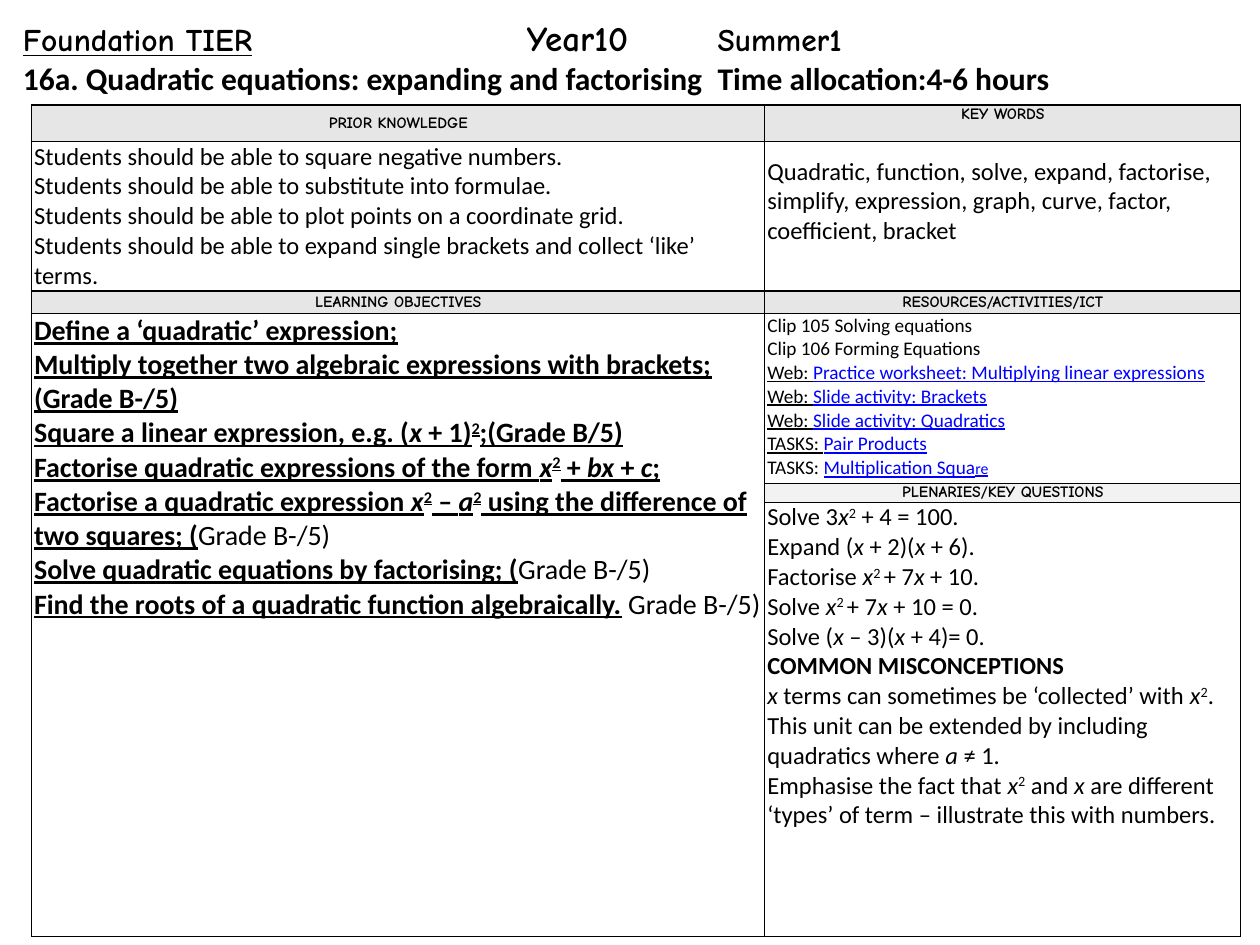
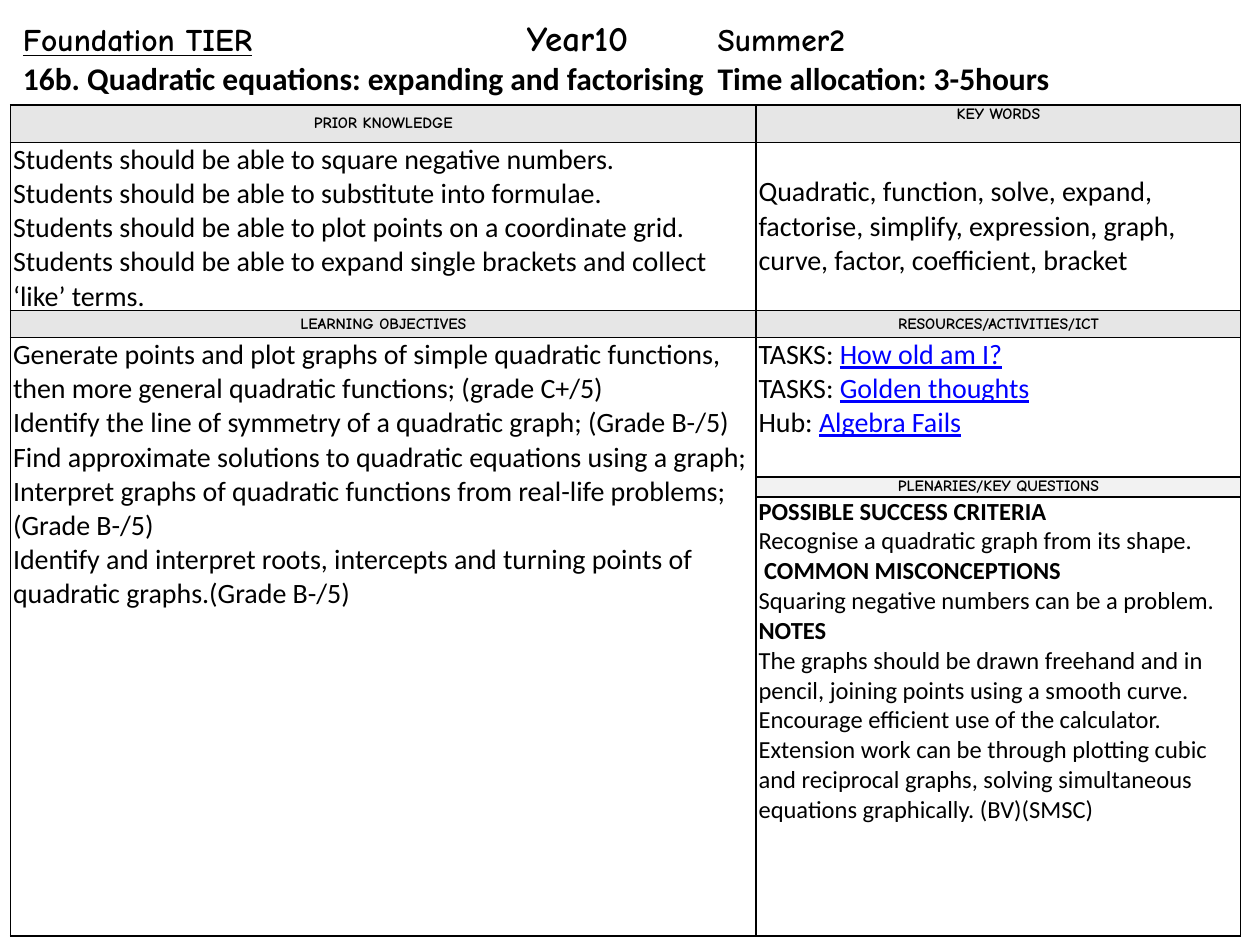
from lxml import etree
from pptx import Presentation
from pptx.dml.color import RGBColor
from pptx.enum import text
from pptx.oxml.ns import qn
from pptx.util import Pt

BLACK, LINK, HEADER, SUBHEADER = "000000", "0000FF", "E6E6E6", "F2F2F2"
BODY_FONT, LABEL_FONT = "Calibri", "Comic Neue"
TITLE_TABS = (288, 397)
MARKS = {"*": "italic", "^": "raised", "#": "bold", "_": "underline",
         "@": "link", "~": "resized"}
MIDDLE, TOP = text.MSO_ANCHOR.MIDDLE, text.MSO_ANCHOR.TOP


def color(hex_string):
    return RGBColor.from_string(hex_string)


def split_marks(line, base):
    state, chunk = dict(base), ""
    for ch in line:
        if ch in MARKS:
            if chunk:
                yield chunk, dict(state)
            chunk = ""
            state[MARKS[ch]] = not state.get(MARKS[ch], False)
        else:
            chunk += ch
    if chunk:
        yield chunk, state


def write(p, line, size=14, alt_size=9, font=BODY_FONT, bold=False,
          underline=False, align=text.PP_ALIGN.LEFT):
    p.alignment = align
    for chunk, style in split_marks(line, {"bold": bold, "underline": underline}):
        r = p.add_run()
        r.text = chunk
        f = r.font
        link = style.get("link", False)
        f.name = font
        f.size = Pt(alt_size if style.get("resized") else size)
        f.bold = style["bold"]
        f.italic = style.get("italic", False)
        f.underline = style["underline"] or link
        f.color.rgb = color(LINK if link else BLACK)
        if style.get("raised"):
            r._r.get_or_add_rPr().set("baseline", "30000")


def write_lines(tf, lines, **fmt):
    for i, line in enumerate(lines):
        write(tf.paragraphs[0] if i == 0 else tf.add_paragraph(), line, **fmt)


def add_tabs(p):
    tabs = etree.SubElement(p._p.get_or_add_pPr(), qn("a:tabLst"))
    for pos in TITLE_TABS:
        etree.SubElement(tabs, qn("a:tab"), pos=str(Pt(pos)), algn="l")


def add_title(s, term, unit):
    tf = s.shapes.add_textbox(Pt(6), Pt(6), Pt(702), Pt(53)).text_frame
    tf.word_wrap = True
    p, unit_p = tf.paragraphs[0], tf.add_paragraph()
    add_tabs(p)
    add_tabs(unit_p)
    write(p, f"_Foundation TIER_\t~Year10~\t{term}", size=18, alt_size=20,
          font=LABEL_FONT, bold=True)
    write(unit_p, unit, size=18, bold=True)


def add_borders(cell):
    tcPr = cell._tc.get_or_add_tcPr()
    for side in ("lnL", "lnR", "lnT", "lnB"):
        ln = etree.SubElement(tcPr, qn(f"a:{side}"), w=str(Pt(1)))
        fill = etree.SubElement(ln, qn("a:solidFill"))
        etree.SubElement(fill, qn("a:srgbClr"), val=BLACK)


def add_grid(s, left, widths, heights):
    frame = s.shapes.add_table(len(heights), len(widths), Pt(left), Pt(60),
                               Pt(sum(widths)), Pt(sum(heights)))
    table = frame.table
    table.first_row = table.horz_banding = False
    for col, width in zip(table.columns, widths):
        col.width = Pt(width)
    for row, height in zip(table.rows, heights):
        row.height = Pt(height)
    for cell in table.iter_cells():
        cell.margin_left = cell.margin_right = Pt(1.5)
        cell.margin_top = cell.margin_bottom = 0
        add_borders(cell)
        cell.fill.background()
    table.cell(3, 0).merge(table.cell(5, 0))
    return table


def add_label(cell, label, fill=HEADER, anchor=MIDDLE):
    cell.fill.solid()
    cell.fill.fore_color.rgb = color(fill)
    cell.vertical_anchor = anchor
    write_lines(cell.text_frame, [label], size=9, font=LABEL_FONT, bold=True,
                align=text.PP_ALIGN.CENTER)


def add_plan(s, left, widths, heights, objectives, resources, questions,
             knowledge_size, resource_size, objectives_bold=False, keyword_gap=0):
    table = add_grid(s, left, widths, heights)
    add_label(table.cell(0, 0), "PRIOR KNOWLEDGE")
    add_label(table.cell(0, 1), "KEY WORDS", anchor=TOP)
    add_label(table.cell(2, 0), "LEARNING OBJECTIVES")
    add_label(table.cell(2, 1), "RESOURCES/ACTIVITIES/ICT")
    add_label(table.cell(4, 1), "PLENARIES/KEY QUESTIONS", SUBHEADER, TOP)
    keywords = table.cell(1, 1)
    keywords.vertical_anchor = MIDDLE
    keywords.margin_bottom = Pt(keyword_gap)
    write_lines(keywords.text_frame, [KEY_WORDS], size=knowledge_size)
    write_lines(table.cell(1, 0).text_frame, PRIOR_KNOWLEDGE, size=knowledge_size)
    write_lines(table.cell(3, 0).text_frame, objectives, size=16,
                bold=objectives_bold, underline=objectives_bold)
    write_lines(table.cell(3, 1).text_frame, resources, size=resource_size)
    write_lines(table.cell(5, 1).text_frame, questions)


PRIOR_KNOWLEDGE = [
    "Students should be able to square negative numbers.",
    "Students should be able to substitute into formulae.",
    "Students should be able to plot points on a coordinate grid.",
    "Students should be able to expand single brackets and collect ‘like’ terms.",
]
KEY_WORDS = ("Quadratic, function, solve, expand, factorise, simplify, expression, "
             "graph, curve, factor, coefficient, bracket")

FACTORISING = dict(
    left=18, widths=(419, 272), heights=(21, 85, 13, 97, 11, 248),
    knowledge_size=14, resource_size=11, objectives_bold=True, keyword_gap=17,
    objectives=[
        "Define a ‘quadratic’ expression;",
        "Multiply together two algebraic expressions with brackets;(Grade B-/5)",
        "Square a linear expression, e.g. (*x* + 1)^2^;(Grade B/5)",
        "Factorise quadratic expressions of the form *x*^2^ + *bx* + *c*;",
        "Factorise a quadratic expression *x*^2^ – *a*^2^ using the difference of "
        "two squares; (#_Grade B-/5)",
        "Solve quadratic equations by factorising; (#_Grade B-/5)",
        "Find the roots of a quadratic function algebraically.#_ Grade B-/5)",
    ],
    resources=[
        "Clip 105 Solving equations",
        "Clip 106 Forming Equations",
        "_Web: @Practice worksheet: Multiplying linear expressions@",
        "_Web: @Slide activity: Brackets@",
        "_Web: @Slide activity: Quadratics@",
        "_TASKS: @Pair Products@",
        "TASKS: @Multiplication Squa~re~@",
    ],
    questions=[
        "Solve 3*x*^2^ + 4 = 100.",
        "Expand (*x* + 2)(*x* + 6).",
        "Factorise *x*^2 ^+ 7*x* + 10.",
        "Solve *x*^2 ^+ 7*x* + 10 = 0.",
        "Solve (*x* – 3)(*x* + 4)= 0.",
        "#COMMON MISCONCEPTIONS",
        "*x* terms can sometimes be ‘collected’ with *x*^2^.",
        "This unit can be extended by including quadratics where *a* ≠ 1.",
        "Emphasise the fact that *x*^2^ and *x* are different ‘types’ of term – "
        "illustrate this with numbers.",
    ])

GRAPHS = dict(
    left=6, widths=(426, 277), heights=(21.5, 95.5, 15.5, 79.5, 11.5, 251),
    knowledge_size=16, resource_size=16,
    objectives=[
        "Generate points and plot graphs of simple quadratic functions, then more "
        "general quadratic functions; (grade C+/5)",
        "Identify the line of symmetry of a quadratic graph; (Grade B-/5)",
        "Find approximate solutions to quadratic equations using a graph;",
        "Interpret graphs of quadratic functions from real-life problems;(Grade B-/5)",
        "Identify and interpret roots, intercepts and turning points of quadratic "
        "graphs.(Grade B-/5)",
    ],
    resources=[
        "TASKS: @How old am I?@",
        "TASKS: @Golden thoughts@",
        "Hub: @Algebra Fails@",
    ],
    questions=[
        "#POSSIBLE SUCCESS CRITERIA",
        "Recognise a quadratic graph from its shape.",
        "# COMMON MISCONCEPTIONS",
        "Squaring negative numbers can be a problem.",
        "#NOTES",
        "The graphs should be drawn freehand and in pencil, joining points using a "
        "smooth curve.",
        "Encourage efficient use of the calculator.",
        "Extension work can be through plotting cubic and reciprocal graphs, solving "
        "simultaneous equations graphically. (BV)(SMSC)",
    ])


def main():
    prs = Presentation()
    prs.slide_width, prs.slide_height = Pt(720), Pt(540)
    topic = "Quadratic equations: expanding and factorising\tTime allocation:"
    for term, unit, plan in (("Summer1", f"16a. {topic}4-6 hours", FACTORISING),
                             ("Summer2", f"16b. {topic} 3-5hours", GRAPHS)):
        s = prs.slides.add_slide(prs.slide_layouts[6])
        add_plan(s, **plan)
        add_title(s, term, unit)
    prs.save("out.pptx")


if __name__ == "__main__":
    main()
